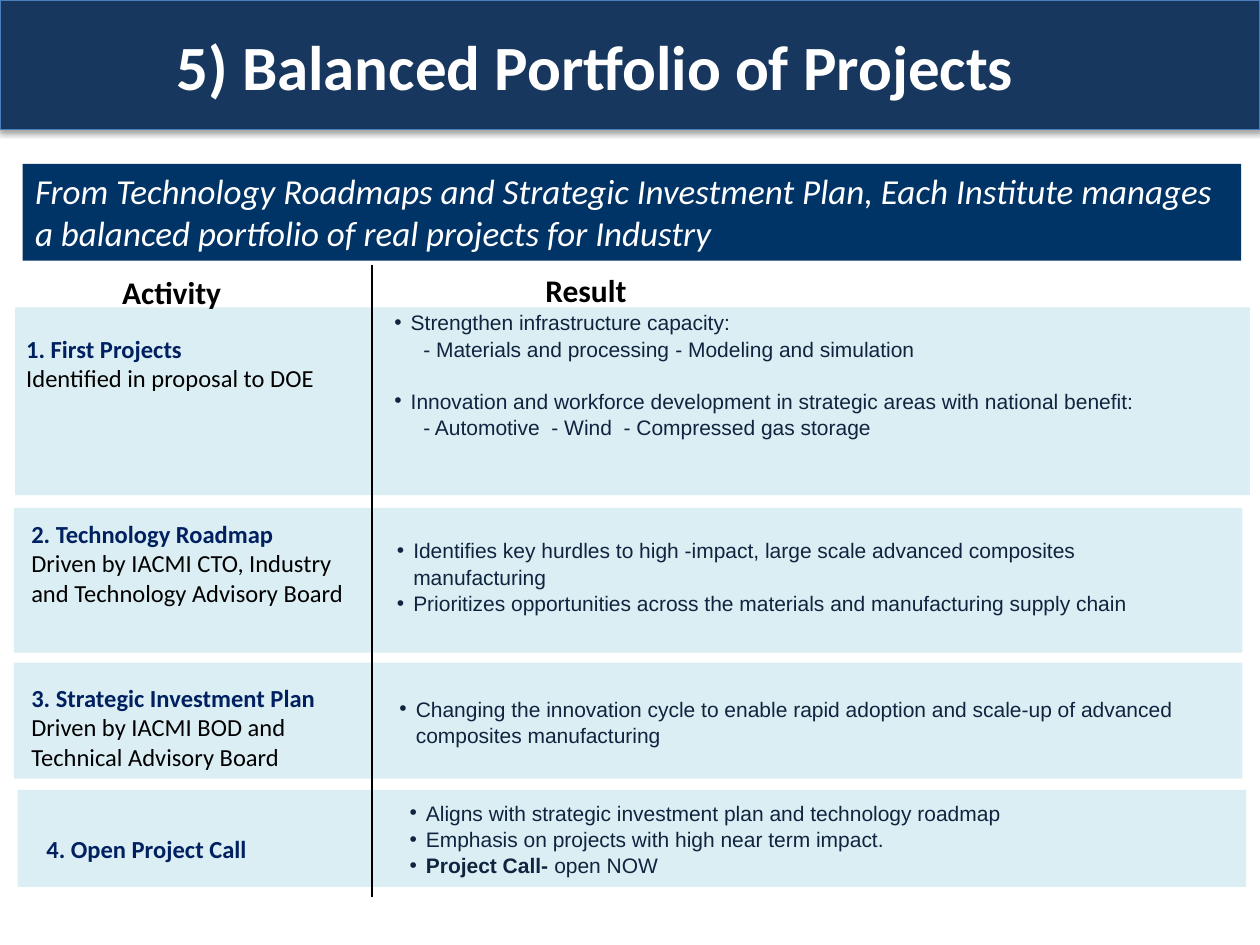
from dataclasses import dataclass

from lxml import etree
from pptx import Presentation
from pptx.dml.color import RGBColor
from pptx.enum.shapes import MSO_CONNECTOR, MSO_SHAPE
from pptx.enum.text import MSO_ANCHOR, MSO_AUTO_SIZE, PP_ALIGN
from pptx.oxml.ns import qn
from pptx.util import Pt

RECTANGLE = MSO_SHAPE.RECTANGLE
STRAIGHT = MSO_CONNECTOR.STRAIGHT
TOP, MIDDLE = MSO_ANCHOR.TOP, MSO_ANCHOR.MIDDLE
LEFT = PP_ALIGN.LEFT
NO_AUTOFIT = MSO_AUTO_SIZE.NONE
EMU_PER_PX = 9144
EMU_PER_PT = 12700
COMPARISON_LAYOUT = 4


@dataclass(frozen=True)
class Theme:
    """Colours, fonts and type sizes of the slide."""
    header: str = "17375E"
    header_line: str = "4B7EBC"
    banner: str = "003366"
    band: str = "DBEEF4"
    label: str = "002060"
    result: str = "0F243E"
    black: str = "000000"
    white: str = "FFFFFF"
    heading_font: str = "Calibri"
    result_font: str = "Arial"
    title_size: int = 36
    banner_size: int = 20
    column_size: int = 18
    label_size: int = 14
    result_size: int = 12


THEME = Theme()

BANDS = [(12, 244, 980, 149), (11, 403, 975, 115), (11, 526, 975, 92), (14, 627, 975, 77)]

ACTIVITIES = [
    ((11, 260, 276, 57), "1. First Projects", "Identified in proposal to DOE"),
    ((15, 407, 276, 81), "2. Technology Roadmap",
     "Driven by IACMI CTO, Industry and Technology Advisory Board"),
    ((15, 537, 281, 81), "3. Strategic Investment Plan",
     "Driven by IACMI BOD and Technical Advisory Board"),
    ((27, 657, 276, 34), "4. Open Project Call", None),
]

RESULTS = [
    ((303, 240, 668, 111), TOP, [
        ("Strengthen infrastructure capacity:",
         ["- Materials and processing\t- Modeling and simulation"]),
        ("Innovation and workforce development in strategic areas with national benefit:",
         ["- Automotive  - Wind  - Compressed gas storage"]),
    ]),
    ((305, 421, 668, 74), TOP, [
        ("Identifies key hurdles to high -impact, large scale advanced composites manufacturing", []),
        ("Prioritizes opportunities across the materials and manufacturing supply chain", []),
    ]),
    ((307, 527, 668, 91), MIDDLE, [
        ("Changing the innovation cycle to enable rapid adoption and scale-up of advanced "
         "composites manufacturing", []),
    ]),
    ((315, 629, 668, 94), TOP, [
        ("Aligns with strategic investment plan and technology roadmap", []),
        ("Emphasis on projects with high near term impact.", []),
        ([("Project Call- ", True), ("open NOW", False)], []),
    ]),
]


def px(length):
    """Turn px into EMU."""
    return length * EMU_PER_PX


def place(box, frame):
    """Move and size a box."""
    box.left, box.top, box.width, box.height = map(px, frame)


def prepare(box, anchor=TOP):
    """Make the text of a box wrap at its own size."""
    text_frame = box.text_frame
    text_frame.word_wrap = True
    text_frame.auto_size = NO_AUTOFIT
    text_frame.vertical_anchor = anchor
    return text_frame


def set_bullet(para, char, margin, hanging, tab):
    """Set the bullet, indent and tab stop of a paragraph."""
    props = para._p.get_or_add_pPr()
    props.set("marL", str(px(margin)))
    props.set("indent", str(px(-hanging)))
    if char:
        etree.SubElement(props, qn("a:buFont"), typeface="Arial")
        etree.SubElement(props, qn("a:buChar"), char=char)
    else:
        etree.SubElement(props, qn("a:buNone"))
    if tab:
        stops = etree.SubElement(props, qn("a:tabLst"))
        etree.SubElement(stops, qn("a:tab"), pos=str(px(tab)), algn="l")


def write(text_frame, text, *, size, color, font=THEME.heading_font, bold=False, italic=False,
          bullet=None, margin=0, hanging=0, tab=None, before=0, spacing=1.0):
    """Write one paragraph, given as a string or as (text, bold) pairs."""
    first = text_frame.paragraphs[0]
    para = text_frame.add_paragraph() if first.runs else first
    set_bullet(para, bullet, margin, hanging, tab)
    para.alignment = LEFT
    para.space_before = Pt(before)
    para.line_spacing = spacing
    for words, weight in [(text, bold)] if isinstance(text, str) else text:
        span = para.add_run()
        span.text = words
        span.font.name = font
        span.font.size = Pt(size)
        span.font.bold = weight
        span.font.italic = italic
        span.font.color.rgb = RGBColor.from_string(color)


def add_panel(page, frame, fill, line=None):
    """Add a filled rectangle."""
    panel = page.shapes.add_shape(RECTANGLE, *map(px, frame))
    panel.shadow.inherit = False
    panel.fill.solid()
    panel.fill.fore_color.rgb = RGBColor.from_string(fill)
    if line:
        panel.line.color.rgb = RGBColor.from_string(line)
        panel.line.width = Pt(0.75)
    else:
        panel.line.fill.background()
    return panel


def add_shadow(panel):
    """Give a panel a soft shadow below it."""
    effects = panel.element.spPr.find(qn("a:effectLst"))
    shadow = etree.SubElement(effects, qn("a:outerShdw"), blurRad=str(round(3.1 * EMU_PER_PT)),
                              dist=str(round(1.8 * EMU_PER_PT)), dir="5400000", rotWithShape="0")
    color = etree.SubElement(shadow, qn("a:srgbClr"), val=THEME.black)
    etree.SubElement(color, qn("a:alpha"), val="35000")


def add_text(page, frame):
    """Add a text box and return its text frame."""
    return prepare(page.shapes.add_textbox(*map(px, frame)))


def add_divider(page, x, top, bottom):
    """Add the vertical line between the columns."""
    line = page.shapes.add_connector(STRAIGHT, px(x), px(top), px(x), px(bottom))
    line.line.color.rgb = RGBColor.from_string(THEME.black)
    line.line.width = Pt(1)
    etree.SubElement(line.element.spPr, qn("a:effectLst"))


def use_placeholder(box, frame, anchor):
    """Move a placeholder into place, in front of the panels."""
    box.element.getparent().append(box.element)
    place(box, frame)
    return prepare(box, anchor)


def add_activity(page, frame, label, detail):
    """Add one entry of the activity column."""
    text_frame = add_text(page, frame)
    write(text_frame, label, size=THEME.label_size, color=THEME.label, bold=True)
    if detail:
        write(text_frame, detail, size=THEME.label_size, color=THEME.black)


def fill_result(box, frame, anchor, items):
    """Fill one list of the result column."""
    text_frame = use_placeholder(box, frame, anchor)
    style = dict(size=THEME.result_size, color=THEME.result, font=THEME.result_font, spacing=1.05)
    after_details = False
    for text, details in items:
        write(text_frame, text, bullet="•", margin=13, hanging=13,
              before=14.4 if after_details else 0, **style)
        for detail in details:
            write(text_frame, detail, margin=23, tab=241 if "\t" in detail else None, **style)
        after_details = bool(details)


def main():
    """Build the slide and save it."""
    deck = Presentation()
    deck.slide_width, deck.slide_height = px(1000), px(750)
    page = deck.slides.add_slide(deck.slide_layouts[COMPARISON_LAYOUT])
    title, *lists = list(page.placeholders)[:1 + len(RESULTS)]

    add_shadow(add_panel(page, (0, 0, 1000, 103), THEME.header, THEME.header_line))
    for frame in BANDS:
        add_panel(page, frame, THEME.band)
    for box, result in zip(lists, RESULTS):
        fill_result(box, *result)
    for activity in ACTIVITIES:
        add_activity(page, *activity)
    add_divider(page, 295, 210, 712)
    for frame, heading in [((87, 212, 111, 40), "Activity"), ((423, 210, 97, 40), "Result")]:
        write(add_text(page, frame), heading, size=THEME.column_size, color=THEME.black, bold=True)
    write(use_placeholder(title, (130, 14, 769, 76), MIDDLE), "5) Balanced Portfolio of Projects",
          size=THEME.title_size, color=THEME.white, bold=True)
    banner = prepare(add_panel(page, (18, 130, 967, 77), THEME.banner))
    write(banner, "From Technology Roadmaps and Strategic Investment Plan, Each Institute manages "
          "a balanced portfolio of real projects for Industry",
          size=THEME.banner_size, color=THEME.white, italic=True)
    deck.save("out.pptx")


if __name__ == "__main__":
    main()
